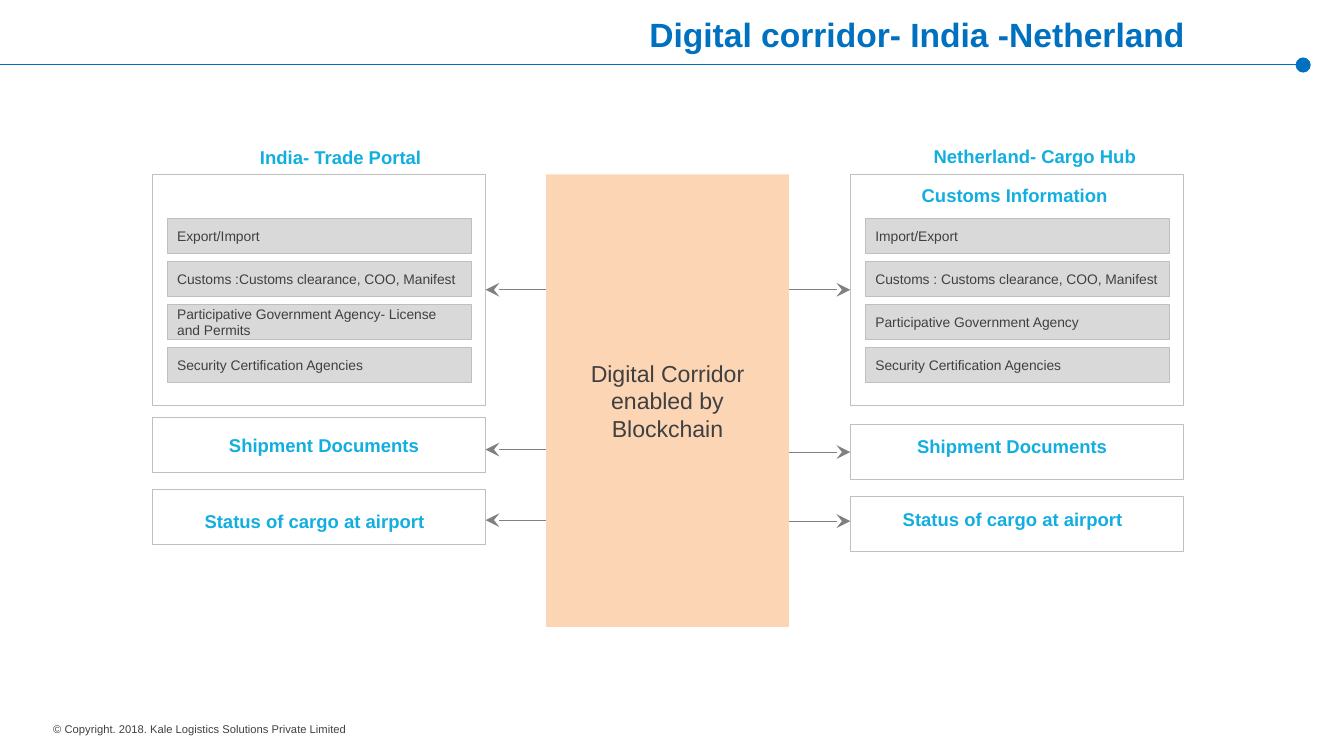
from dataclasses import dataclass

from lxml import etree
from pptx import Presentation, util as u
from pptx.dml import color
from pptx.enum import shapes, text
from pptx.oxml import ns

CELL = 0.1
HUES = {
    "blue": "0070C0",
    "sky": "12AEE0",
    "ink": "404040",
    "edge": "BFBFBF",
    "gray": "D9D9D9",
    "peach": "FCD5B5",
    "arrow": "808080",
}
LEFT, MID, RIGHT = text.PP_ALIGN.LEFT, text.PP_ALIGN.CENTER, text.PP_ALIGN.RIGHT


@dataclass(frozen=True)
class Area:
    col: float
    row: float
    wide: float
    high: float


@dataclass(frozen=True)
class Label:
    words: str
    area: Area


@dataclass(frozen=True)
class Arrow:
    box: int
    row: float | None = None


@dataclass(frozen=True)
class Side:
    col: float
    start: float
    site: int
    boxes: tuple[Area, ...]
    items: tuple[str, ...]
    labels: tuple[Label, ...]
    arrows: tuple[Arrow, ...]


HUB = Area(54.2, 17.3, 24.1, 44.9)
BAR = Area(1.5, 21.7, 30.2, 3.4)
BAR_STEP = 4.27

INDIA = Side(
    15.1, HUB.col, 3,
    (Area(15.1, 17.3, 33.1, 22.9), Area(15.1, 41.4, 33.1, 5.5), Area(15.1, 48.5, 33.1, 5.5)),
    ("Export/Import", "Customs :Customs clearance, COO, Manifest",
     "Participative Government Agency- License and Permits", "Security Certification Agencies"),
    (Label("India- Trade Portal", Area(23.4, 14, 20.8, 3.2)),
     Label("Shipment Documents", Area(16.1, 42.6, 32.1, 3.2)),
     Label("Status of cargo at airport", Area(19.2, 50.1, 24, 3.2))),
    (Arrow(0), Arrow(1, 44.6), Arrow(2, 51.6)),
)
DUTCH = Side(
    84.4, HUB.col + HUB.wide, 1,
    (Area(84.4, 17.3, 33.1, 22.9), Area(84.4, 42.1, 33.1, 5.5), Area(84.4, 49.2, 33.1, 5.5)),
    ("Import/Export", "Customs : Customs clearance, COO, Manifest",
     "Participative Government Agency", "Security Certification Agencies"),
    (Label("Netherland- Cargo Hub", Area(86.9, 13.9, 31.6, 3.2)),
     Label("Customs Information", Area(84.9, 17.8, 31.6, 3.2)),
     Label("Shipment Documents", Area(84.4, 42.7, 32.1, 3.2)),
     Label("Status of cargo at airport", Area(88.5, 49.9, 24, 3.2))),
    (Arrow(0), Arrow(1), Arrow(2, 51.7)),
)


def span(cells: float) -> u.Length:
    return u.Inches(cells * CELL)


def frame(area: Area) -> tuple[u.Length, ...]:
    return span(area.col), span(area.row), span(area.wide), span(area.high)


def hue(name: str) -> color.RGBColor:
    return color.RGBColor.from_string(HUES[name])


def write(shape, words: str, size: float, tint: str, align=LEFT,
          bold: bool = False, anchor=text.MSO_ANCHOR.MIDDLE) -> None:
    body = shape.text_frame
    body.text = words
    body.word_wrap = True
    body.auto_size = text.MSO_AUTO_SIZE.NONE
    body.vertical_anchor = anchor
    para = body.paragraphs[0]
    para.alignment = align
    font = para.runs[0].font
    font.name, font.size, font.bold = "Arial", u.Pt(size), bold
    font.color.rgb = hue(tint)


def block(page, area: Area, fill: str | None = None, edge: str | None = None,
          kind=shapes.MSO_SHAPE.RECTANGLE):
    shape = page.shapes.add_shape(kind, *frame(area))
    shape.shadow.inherit = False
    if fill:
        shape.fill.solid()
        shape.fill.fore_color.rgb = hue(fill)
    else:
        shape.fill.background()
    if edge:
        shape.line.color.rgb = hue(edge)
        shape.line.width = u.Pt(0.5)
    else:
        shape.line.fill.background()
    return shape


def link(page, start: float, end: float, row: float, tint: str):
    line = page.shapes.add_connector(
        shapes.MSO_CONNECTOR.STRAIGHT, span(start), span(row), span(end), span(row))
    line.line.color.rgb = hue(tint)
    line.line.width = u.Pt(0.75)
    etree.SubElement(line._element.spPr, ns.qn("a:effectLst"))
    return line


def point(page, side: Side, arrow: Arrow, box) -> None:
    area = side.boxes[arrow.box]
    end = area.col + (area.wide if side.site == 3 else 0)
    row = area.row + area.high / 2 if arrow.row is None else arrow.row
    line = link(page, side.start, end, row, "arrow")
    if arrow.row is None:
        line.end_connect(box, side.site)
    etree.SubElement(line.line._get_or_add_ln(), ns.qn("a:tailEnd"),
                     type="stealth", w="lg", len="lg")


def draw(page, side: Side) -> None:
    boxes = [block(page, area, edge="edge") for area in side.boxes]
    for i, words in enumerate(side.items):
        area = Area(side.col + BAR.col, BAR.row + i * BAR_STEP, BAR.wide, BAR.high)
        write(block(page, area, "gray", "edge"), words, 9.9, "ink")
    for label in side.labels:
        note = page.shapes.add_textbox(*frame(label.area))
        write(note, label.words, 13.2, "sky", MID, True, text.MSO_ANCHOR.TOP)
    for arrow in side.arrows:
        point(page, side, arrow, boxes[arrow.box])


def main() -> None:
    deck = Presentation()
    deck.slide_width, deck.slide_height = span(133.4), span(75)
    page = deck.slides.add_slide(deck.slide_layouts[5])

    title = page.shapes.title
    title.left, title.top, title.width, title.height = frame(Area(26.9, 1.1, 91.7, 4.5))
    write(title, "Digital corridor- India -Netherland", 24, "blue", RIGHT, True)
    link(page, 0, 128.6, 6.4, "blue")
    block(page, Area(128.6, 5.7, 1.5, 1.5), "blue", kind=shapes.MSO_SHAPE.OVAL)

    write(block(page, HUB, "peach"), "Digital Corridor enabled by Blockchain", 16.5, "ink", MID)
    for side in (INDIA, DUTCH):
        draw(page, side)

    foot = page.shapes.add_textbox(*frame(Area(4.3, 70.7, 61.1, 3.3)))
    write(foot, "© Copyright. 2018. Kale Logistics Solutions Private Limited", 8, "ink")
    deck.save("out.pptx")


if __name__ == "__main__":
    main()
